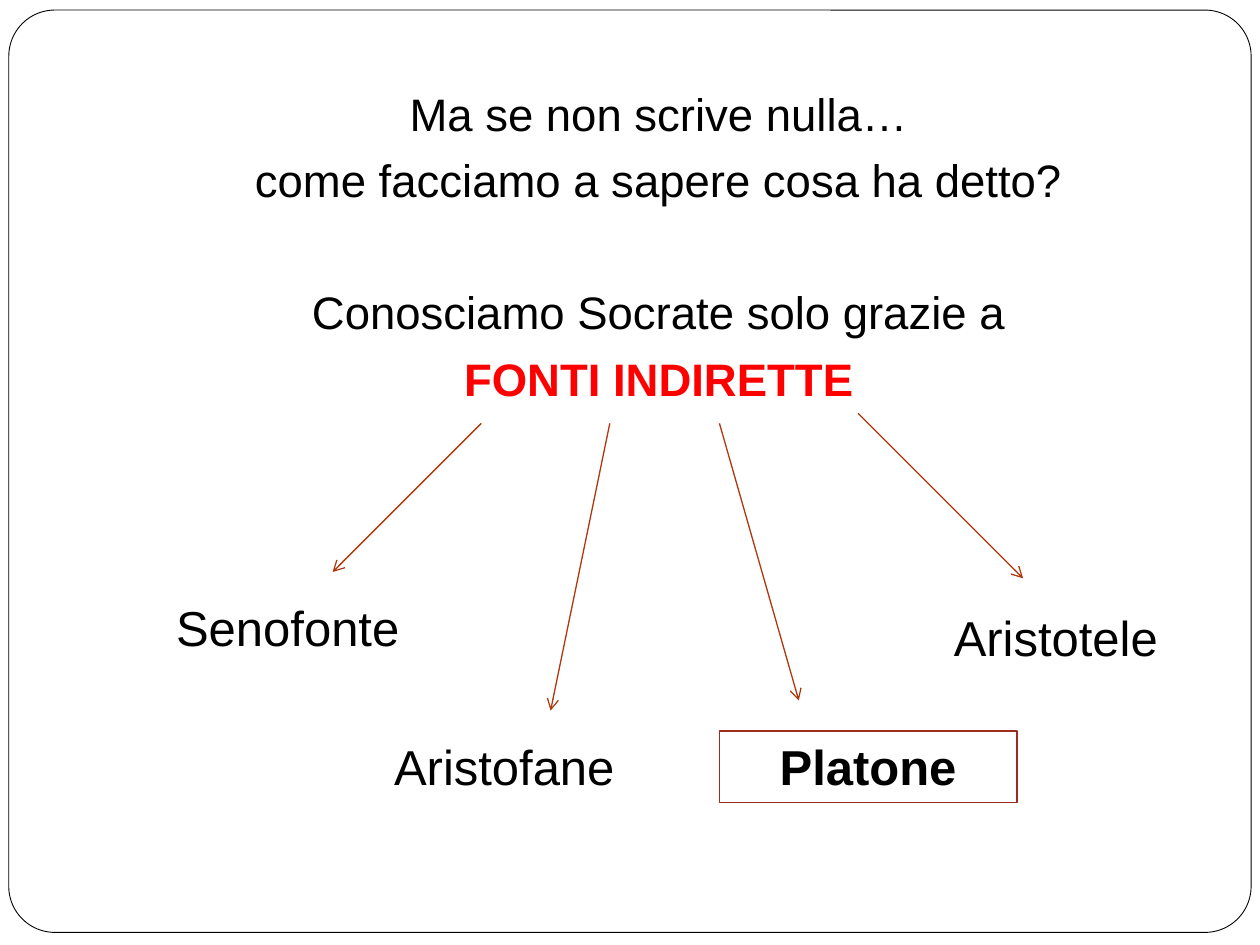
from lxml.etree import SubElement
from pptx import Presentation
from pptx.dml.color import RGBColor
from pptx.enum.shapes import MSO_CONNECTOR, MSO_SHAPE
from pptx.enum.text import MSO_ANCHOR, MSO_AUTO_SIZE, PP_ALIGN as Align
from pptx.oxml.ns import qn
from pptx.util import Inches, Pt

COLORS = {"text": "000000", "paper": "FFFFFF", "accent": "FF0000",
          "arrow": "B1360B", "box": "9B2D1F"}
FONT = "Arial"

# text, colour, bold, space before in points
QUESTION = [
    ("Ma se non scrive nulla…", "text", False, 0),
    ("come facciamo a sapere cosa ha detto?", "text", False, 7),
    ("Conosciamo Socrate solo grazie a", "text", False, 44),
    ("FONTI INDIRETTE", "accent", True, 7),
]
# name, left, top, alignment, boxed, arrow start, arrow end
SOURCES = [
    ("Senofonte", 1.3, 4.69, Align.JUSTIFY, False, (3.82, 3.36), (2.64, 4.54)),
    ("Aristofane", 3.03, 5.8, Align.JUSTIFY, False, (4.84, 3.36), (4.37, 5.64)),
    ("Platone", 5.71, 5.8, Align.CENTER, True, (5.71, 3.36), (6.34, 5.56)),
    ("Aristotele", 7.2, 4.77, Align.CENTER, False, (6.81, 3.28), (8.12, 4.59)),
]
NAME_SIZE = (2.36, 0.57)


def rgb(name):
    return RGBColor.from_string(COLORS[name])


def inches(*lengths):
    return [Inches(length) for length in lengths]


def write(paragraph, text, size, color="text", bold=False, align=Align.CENTER):
    paragraph.alignment = align
    run = paragraph.add_run()
    run.text = text
    run.font.name, run.font.size, run.font.bold = FONT, Pt(size), bold
    run.font.color.rgb = rgb(color)


def outlined(slide, kind, place, line, width):
    shape = slide.shapes.add_shape(kind, *inches(*place))
    shape.shadow.inherit = False
    shape.fill.solid()
    shape.fill.fore_color.rgb = rgb("paper")
    shape.line.color.rgb = rgb(line)
    shape.line.width = Pt(width)
    return shape


def add_question(slide):
    body = slide.placeholders[1]
    body.left, body.top, body.width, body.height = inches(0.98, 0.63, 8.5, 2.73)
    frame = body.text_frame
    frame.auto_size = MSO_AUTO_SIZE.NONE
    for number, (text, color, bold, before) in enumerate(QUESTION):
        line = frame.add_paragraph() if number else frame.paragraphs[0]
        line.space_before = Pt(before)
        write(line, text, 26, color, bold)
        properties = line._p.get_or_add_pPr()
        properties.set("marL", "0")
        properties.set("indent", "0")
        SubElement(properties, qn("a:buNone"))
    return body


def add_arrow(slide, start, end):
    arrow = slide.shapes.add_connector(MSO_CONNECTOR.STRAIGHT, *inches(*start, *end))
    arrow.line.color.rgb = rgb("arrow")
    arrow.line.width = Pt(0.75)
    SubElement(arrow.line._get_or_add_ln(), qn("a:tailEnd"), type="arrow")
    SubElement(arrow.element.spPr, qn("a:effectLst"))


def add_source(slide, name, left, top, align, boxed):
    place = (left, top, *NAME_SIZE)
    if boxed:
        label = outlined(slide, MSO_SHAPE.RECTANGLE, place, "box", 1)
    else:
        label = slide.shapes.add_textbox(*inches(*place))
    frame = label.text_frame
    frame.word_wrap = True
    frame.vertical_anchor = MSO_ANCHOR.TOP
    write(frame.paragraphs[0], name, 28, bold=boxed, align=align)


def main():
    deck = Presentation()
    deck.slide_width, deck.slide_height = inches(10, 7.5)
    slide = deck.slides.add_slide(deck.slide_layouts[1])
    title = slide.shapes.title.element
    title.getparent().remove(title)

    body = add_question(slide)
    border = outlined(slide, MSO_SHAPE.ROUNDED_RECTANGLE,
                      (0.07, 0.08, 9.86, 7.32), "text", 0.5)
    border.adjustments[0] = 0.05
    body.element.addprevious(border.element)  # border goes behind the text

    for *_, start, end in SOURCES:
        add_arrow(slide, start, end)
    for *label, _, _ in SOURCES:
        add_source(slide, *label)
    deck.save("out.pptx")


if __name__ == "__main__":
    main()
